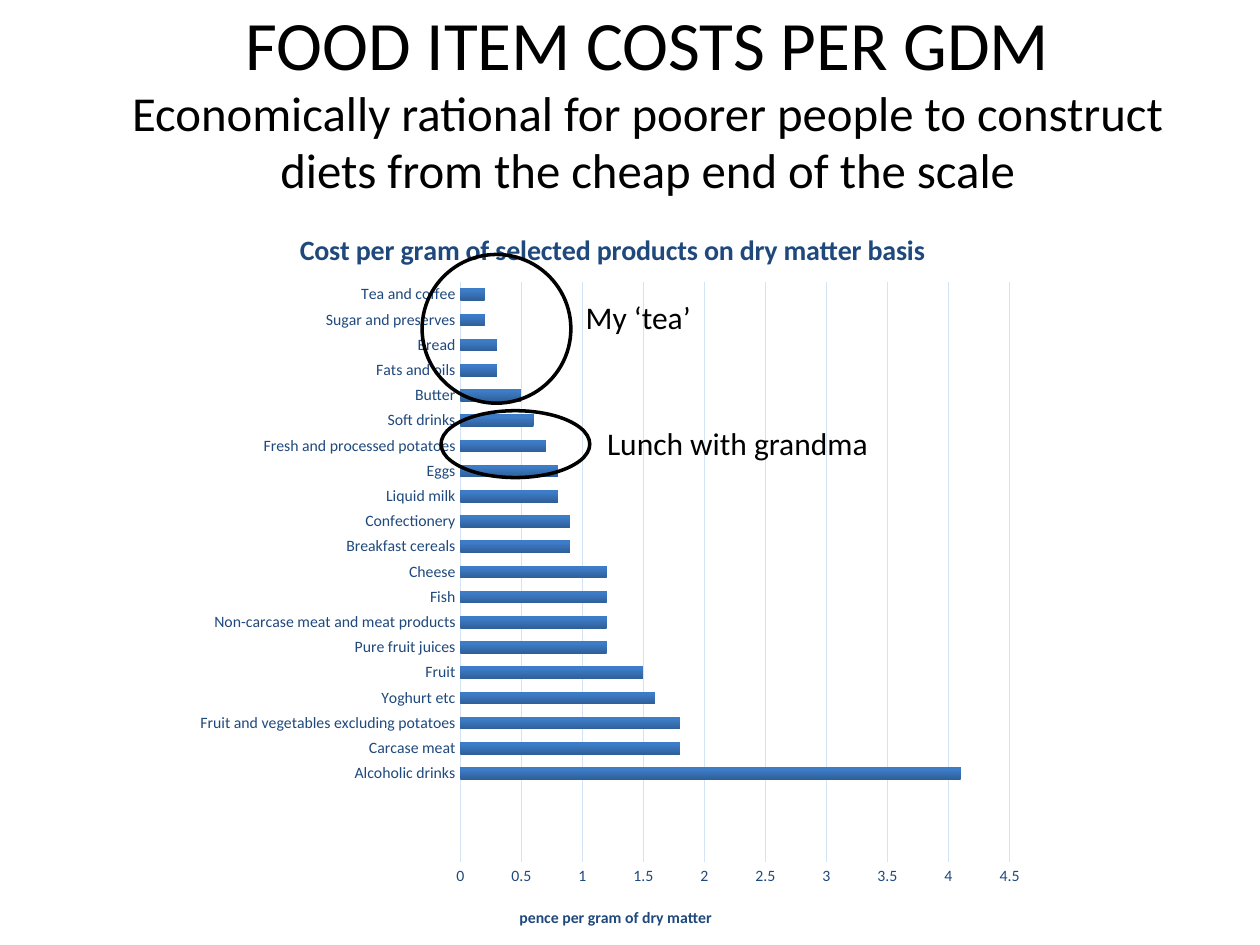
from lxml.etree import SubElement
from pptx import Presentation
from pptx.chart.data import CategoryChartData
from pptx.dml.color import RGBColor
from pptx.enum.chart import XL_CHART_TYPE, XL_TICK_MARK
from pptx.enum.shapes import MSO_SHAPE
from pptx.enum.text import MSO_ANCHOR, MSO_AUTO_SIZE, PP_ALIGN
from pptx.oxml import parse_xml
from pptx.oxml.ns import nsdecls, qn
from pptx.util import Pt

BLACK = RGBColor(0x00, 0x00, 0x00)
NAVY = RGBColor(0x1F, 0x49, 0x7D)
PALE_BLUE = RGBColor(0xD4, 0xE3, 0xF4)
BAR_DARK = RGBColor(0x2F, 0x5F, 0x99)
BAR_LIGHT = RGBColor(0x3D, 0x7C, 0xC7)

# Content
TITLE_LINES = [
    ("FOOD ITEM COSTS PER GDM", 39.6),
    ("Economically rational for poorer people to construct "
     "diets from the cheap end of the scale", 27.9),
]
CHART_TITLE = "Cost per gram of selected products on dry matter basis"
AXIS_TITLE = "pence per gram of dry matter"
EMPTY_ROWS = 3
COSTS = [
    ("Alcoholic drinks", 4.1),
    ("Carcase meat", 1.8),
    ("Fruit and vegetables excluding potatoes", 1.8),
    ("Yoghurt etc", 1.6),
    ("Fruit", 1.5),
    ("Pure fruit juices", 1.2),
    ("Non-carcase meat and meat products", 1.2),
    ("Fish", 1.2),
    ("Cheese", 1.2),
    ("Breakfast cereals", 0.9),
    ("Confectionery", 0.9),
    ("Liquid milk", 0.8),
    ("Eggs", 0.8),
    ("Fresh and processed potatoes", 0.7),
    ("Soft drinks", 0.6),
    ("Butter", 0.5),
    ("Fats and oils", 0.3),
    ("Bread", 0.3),
    ("Sugar and preserves", 0.2),
    ("Tea and coffee", 0.2),
]
# Left, top, width, height in points
TITLE_BOX = (59.8, 6.5, 620.6, 104.4)
CHART_BOX = (105.1, 111.6, 487.4, 431.3)
RINGS = [(241.2, 145.4, 85, 85), (252, 234.7, 85, 38.2)]
NOTES = [
    ("My ‘tea’", (327.6, 167, 85, 28.8)),
    ("Lunch with grandma", (339.8, 239, 178.6, 28.8)),
]


def points(box):
    return [Pt(value) for value in box]


def set_format(font, color, **values):
    for name, value in {"name": "Calibri", **values}.items():
        setattr(font, name, value)
    font.color.rgb = color


def set_layout(element, index, **fractions):
    """Place a chart part by fractions of the chart's size."""
    for old in element.findall(qn("c:layout")):
        element.remove(old)
    layout = parse_xml(f"<c:layout {nsdecls('c')}/>")
    element.insert(index, layout)
    manual = SubElement(layout, qn("c:manualLayout"))
    settings = {"xMode": "edge", "yMode": "edge", **fractions}
    if "w" in fractions:
        settings = {"layoutTarget": "inner", **settings}
    for name, value in settings.items():
        SubElement(manual, qn(f"c:{name}")).set("val", str(value))


def set_chart_title(title, text, size, x, y):
    run = title.text_frame.paragraphs[0].add_run()
    run.text = text
    set_format(run.font, NAVY, size=Pt(size), bold=True)
    set_layout(title._element, 1, x=x, y=y)


def add_title(slide):
    title = slide.shapes.title
    title.left, title.top, title.width, title.height = points(TITLE_BOX)
    frame = title.text_frame
    frame.auto_size = MSO_AUTO_SIZE.NONE
    frame.word_wrap = True
    frame.vertical_anchor = MSO_ANCHOR.MIDDLE
    paragraph = frame.paragraphs[0]
    paragraph.alignment = PP_ALIGN.CENTER
    paragraph.line_spacing = 0.97
    for index, (text, size) in enumerate(TITLE_LINES):
        if index:
            paragraph.add_line_break()
        run = paragraph.add_run()
        run.text = text
        set_format(run.font, BLACK, size=Pt(size))


def add_cost_chart(slide):
    rows = [("", None)] * EMPTY_ROWS + COSTS
    data = CategoryChartData()
    data.categories = [name for name, _ in rows]
    data.add_series("Series 1", [cost for _, cost in rows])
    chart = slide.shapes.add_chart(
        XL_CHART_TYPE.BAR_CLUSTERED, *points(CHART_BOX), data).chart
    set_format(chart.font, BLACK, size=Pt(10))
    chart.has_legend = False
    chart.has_title = True
    set_chart_title(chart.chart_title, CHART_TITLE, 16, 0.13, 0.04)

    # Bars
    plot = chart.plots[0]
    plot.gap_width = 100
    plot.vary_by_categories = False
    fill = plot.series[0].format.fill
    fill.gradient()
    fill.gradient_angle = 90
    for stop, color, position in zip(
            fill.gradient_stops, (BAR_DARK, BAR_LIGHT), (0, 0.8)):
        stop.color.rgb = color
        stop.position = position

    # Axes
    category_axis, value_axis = chart.category_axis, chart.value_axis
    for axis in (category_axis, value_axis):
        axis.major_tick_mark = axis.minor_tick_mark = XL_TICK_MARK.NONE
        set_format(axis.tick_labels.font, NAVY, size=Pt(9))
    value_axis.minimum_scale, value_axis.maximum_scale = 0, 4.5
    value_axis.major_unit = 0.5
    value_axis.tick_labels.number_format = "General"
    value_axis.tick_labels.number_format_is_linked = False
    value_axis.format.line.fill.background()
    value_axis.has_major_gridlines = True
    for part in (category_axis, value_axis.major_gridlines):
        part.format.line.color.rgb = PALE_BLUE
        part.format.line.width = Pt(0.75)
    value_axis.has_title = True
    set_chart_title(value_axis.axis_title, AXIS_TITLE, 9, 0.39, 0.94)
    plot_area = chart._chartSpace.find(".//" + qn("c:plotArea"))
    set_layout(plot_area, 0, x=0.324, y=0.115, w=0.644, h=0.768)


def add_annotations(slide):
    for box in RINGS:
        ring = slide.shapes.add_shape(MSO_SHAPE.OVAL, *points(box))
        ring.shadow.inherit = False
        ring.fill.background()
        ring.line.color.rgb = BLACK
        ring.line.width = Pt(2)
    for text, box in NOTES:
        frame = slide.shapes.add_textbox(*points(box)).text_frame
        frame.word_wrap = True
        frame.auto_size = MSO_AUTO_SIZE.SHAPE_TO_FIT_TEXT
        run = frame.paragraphs[0].add_run()
        run.text = text
        set_format(run.font, BLACK, size=Pt(18))


def main():
    presentation = Presentation()
    presentation.slide_width, presentation.slide_height = Pt(720), Pt(540)
    slide = presentation.slides.add_slide(presentation.slide_layouts[5])
    add_title(slide)
    add_cost_chart(slide)
    add_annotations(slide)
    presentation.save("out.pptx")


if __name__ == "__main__":
    main()
